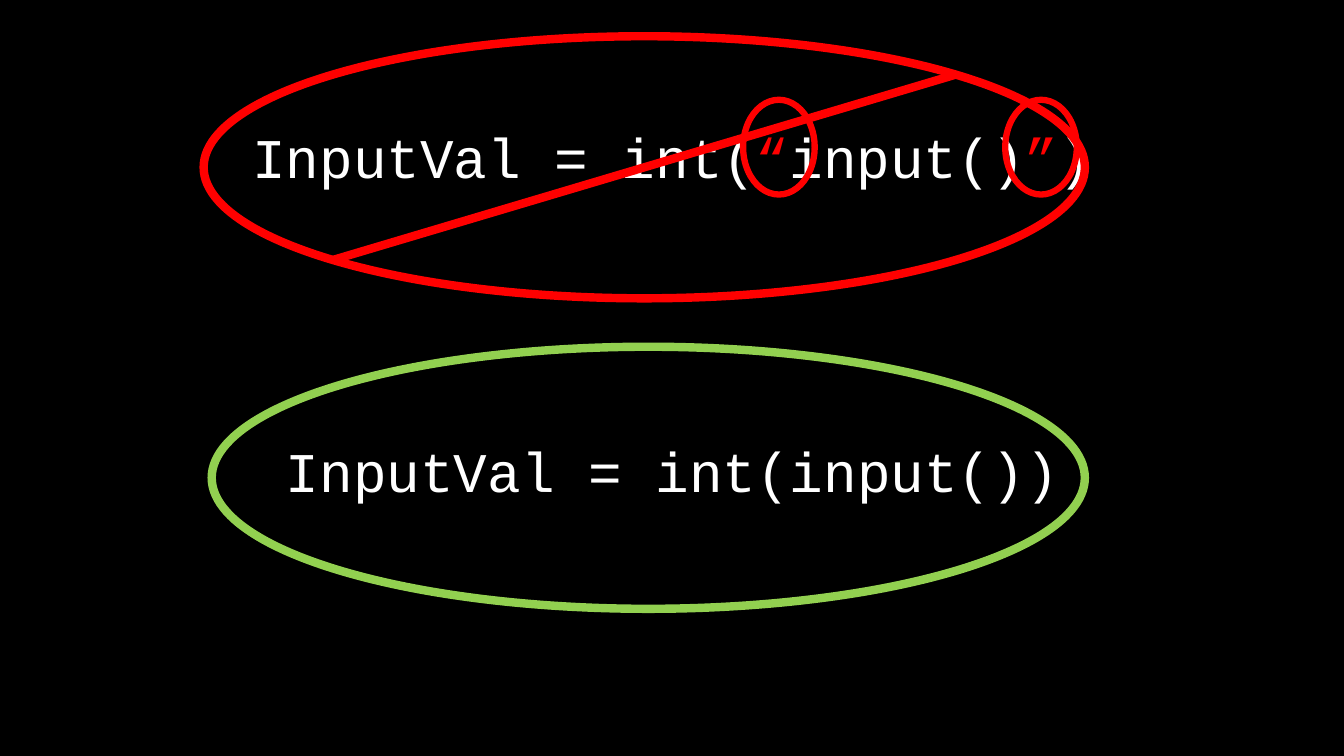
from pptx import Presentation
from pptx.dml.color import RGBColor
from pptx.enum.shapes import MSO_CONNECTOR, MSO_SHAPE
from pptx.enum.text import MSO_ANCHOR, PP_ALIGN
from pptx.oxml.ns import qn
from pptx.util import Inches, Pt
from lxml import etree

OVAL, STRAIGHT = MSO_SHAPE.OVAL, MSO_CONNECTOR.STRAIGHT
CENTER, TOP = PP_ALIGN.CENTER, MSO_ANCHOR.TOP

THEME = {
    "background": RGBColor(0x00, 0x00, 0x00),
    "code": RGBColor(0xFF, 0xFF, 0xFF),
    "wrong": RGBColor(0xFF, 0x00, 0x00),
    "right": RGBColor(0x92, 0xD0, 0x50),
    "font": "Courier New",
    "code_size": Pt(40),
    "thick": Pt(6),
    "medium": Pt(4.5),
}

prs = Presentation()
prs.slide_width, prs.slide_height = Inches(13.33), Inches(7.5)
slide = prs.slides.add_slide(prs.slide_layouts[6])
slide.background.fill.solid()
slide.background.fill.fore_color.rgb = THEME["background"]


def add_code(top, pieces):
    """Add one centred line of code from (text, colour) pieces."""
    margin = Inches(0.67)
    box = slide.shapes.add_textbox(margin, Inches(top), prs.slide_width - 2 * margin, Inches(0.64))
    frame = box.text_frame
    frame.word_wrap = True
    frame.vertical_anchor = TOP
    frame.margin_left = frame.margin_right = frame.margin_top = frame.margin_bottom = 0
    line = frame.paragraphs[0]
    line.alignment = CENTER
    line.font.name, line.font.size = THEME["font"], THEME["code_size"]
    for text, colour in pieces:
        run = line.add_run()
        run.text = text
        run.font.color.rgb = THEME[colour]


def add_ring(left, top, width, height, colour, weight):
    """Add an unfilled ellipse."""
    ring = slide.shapes.add_shape(OVAL, Inches(left), Inches(top), Inches(width), Inches(height))
    ring.shadow.inherit = False
    ring.fill.background()
    ring.line.color.rgb = THEME[colour]
    ring.line.width = THEME[weight]


# Code lines: quoted call is wrong, plain call is right
add_code(1.22, [("InputVal = int(", "code"), ("“", "wrong"), ("input()", "code"),
                ("”", "wrong"), (")", "code")])
add_code(4.33, [("InputVal = int(input())", "code")])

# Crossed-out ring around the wrong line
add_ring(2.02, 0.36, 8.74, 2.6, "wrong", "thick")
strike = slide.shapes.add_connector(STRAIGHT, Inches(9.48), Inches(0.74), Inches(3.3), Inches(2.58))
strike.line.color.rgb = THEME["wrong"]
strike.line.width = THEME["thick"]
etree.SubElement(strike.element.spPr, qn("a:effectLst"))

# Ring around the right line
add_ring(2.1, 3.44, 8.66, 2.6, "right", "thick")

# Small rings around the two stray quotes
for quote_left in (9.97, 7.37):
    add_ring(quote_left, 0.99, 0.71, 0.94, "wrong", "medium")

prs.save("out.pptx")
